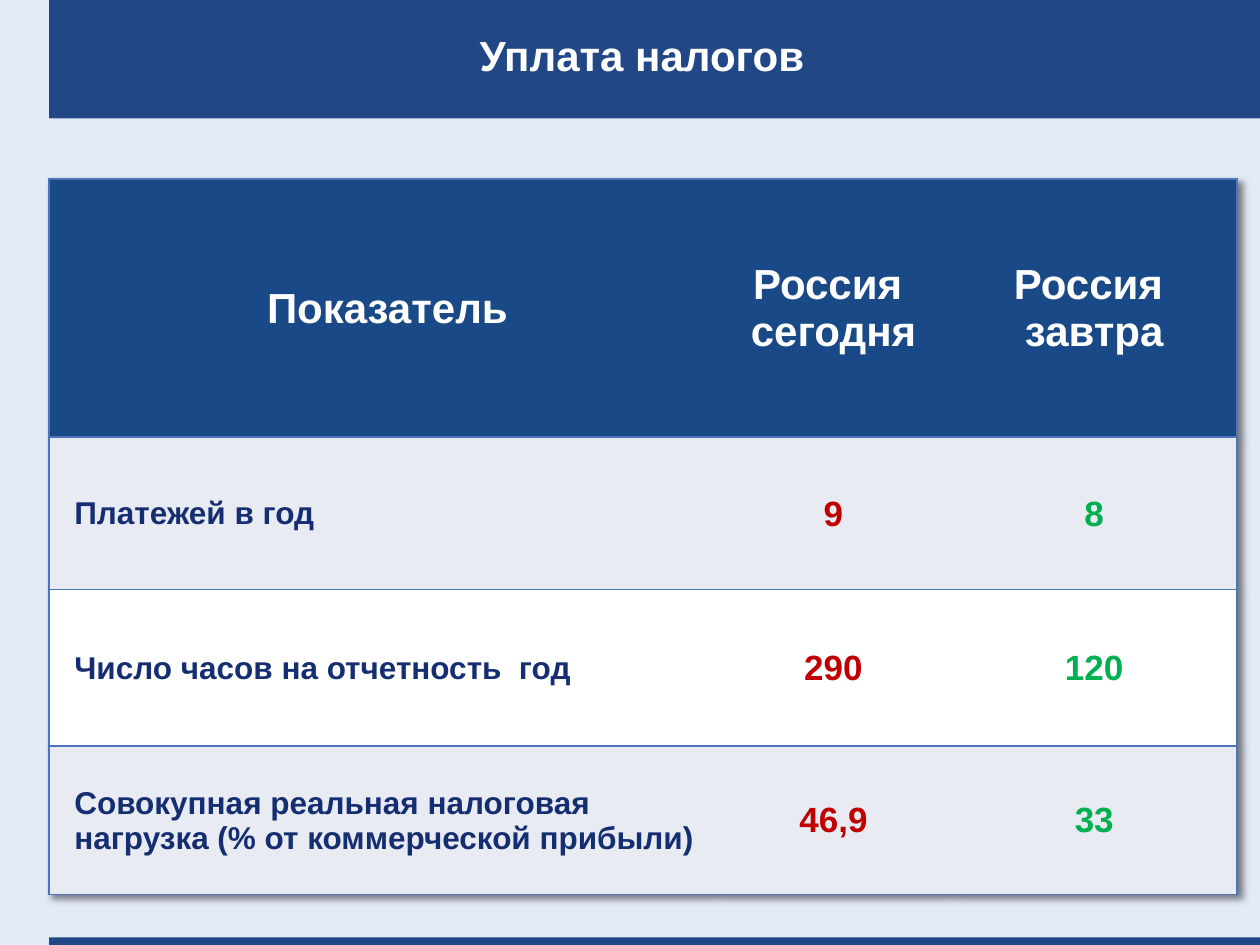
from lxml import etree
from pptx import Presentation
from pptx.dml.color import RGBColor
from pptx.enum.shapes import MSO_SHAPE
from pptx.enum.text import MSO_ANCHOR, PP_ALIGN
from pptx.oxml import parse_xml
from pptx.oxml.ns import nsdecls, qn
from pptx.util import Inches, Pt

RECT = MSO_SHAPE.RECTANGLE
MIDDLE = MSO_ANCHOR.MIDDLE
LEFT, CENTER = PP_ALIGN.LEFT, PP_ALIGN.CENTER

PALE = RGBColor(0xE3, 0xEB, 0xF8)
BLUE = RGBColor(0x21, 0x47, 0x86)
HEAD = RGBColor(0x19, 0x49, 0x86)
EDGE = RGBColor(0x4D, 0x74, 0xBB)
GRAY = RGBColor(0xE9, 0xEB, 0xF3)
WHITE = RGBColor(0xFF, 0xFF, 0xFF)
NAVY = RGBColor(0x14, 0x2E, 0x71)
RED = RGBColor(0xC0, 0x00, 0x00)
GREEN = RGBColor(0x00, 0xB0, 0x50)

MARGIN = 0.39
COLS = [5.29, 1.87, 2.27]
HEIGHTS = [2.05, 1.21, 1.24, 1.18]
ROWS = [
    ["Показатель", "Россия \nсегодня", "Россия \nзавтра"],
    ["Платежей в год", "9", "8"],
    ["Число часов на отчетность  год", "290", "120"],
    ["Совокупная реальная налоговая нагрузка (% от коммерческой прибыли)",
     "46,9", "33"],
]
STYLES = [
    dict(size=18, color=NAVY, align=LEFT, indent=0.19),
    dict(size=20, color=RED),
    dict(size=20, color=GREEN),
]


def write(frame, text, size=24, color=WHITE, align=CENTER, indent=0, spacing=None):
    frame.word_wrap = True
    frame.text = text
    for para in frame.paragraphs:
        para.alignment = align
        para.line_spacing = spacing
        if indent:
            props = para._p.get_or_add_pPr()
            props.set("marL", str(Inches(indent)))
            props.set("indent", "0")
        for run in para.runs:
            font = run.font
            font.name = "Arial"
            font.size = Pt(size)
            font.bold = True
            font.color.rgb = color


def shadow(blur, dist, angle, alpha):
    return parse_xml(
        f'<a:effectLst {nsdecls("a")}><a:outerShdw blurRad="{Pt(blur)}" '
        f'dist="{Pt(dist)}" dir="{angle * 60000}" algn="tl" rotWithShape="0">'
        f'<a:srgbClr val="000000"><a:alpha val="{alpha * 1000}"/></a:srgbClr>'
        '</a:outerShdw></a:effectLst>')


def add_bar(slide, top, height):
    bar = slide.shapes.add_shape(
        RECT, Inches(MARGIN), Inches(top), Inches(10 - MARGIN), Inches(height))
    bar.shadow.inherit = False
    bar.fill.solid()
    bar.fill.fore_color.rgb = BLUE
    bar.line.fill.background()


def add_title(slide, text):
    box = slide.shapes.add_textbox(
        Inches(MARGIN), 0, Inches(9.21), Inches(0.94))
    frame = box.text_frame
    frame.margin_left = Inches(0.2)
    frame.margin_right = frame.margin_top = frame.margin_bottom = 0
    frame.vertical_anchor = MIDDLE
    write(frame, text, spacing=0.8)
    props = frame.paragraphs[0].runs[0].font._element
    props.find(qn("a:solidFill")).addnext(shadow(0, 3, 45, 100))


def set_edges(cell, shown):
    props = cell._tc.get_or_add_tcPr()
    for place, side in enumerate("LRTB"):
        line = etree.Element(qn(f"a:ln{side}"), w=str(Pt(1)))
        if side in shown:
            fill = etree.SubElement(line, qn("a:solidFill"))
            etree.SubElement(fill, qn("a:srgbClr"), val=str(EDGE))
        else:
            etree.SubElement(line, qn("a:noFill"))
        props.insert(place, line)


def fill_cell(cell, text, row, col):
    cell.margin_left = cell.margin_right = cell.margin_top = Inches(0.01)
    cell.margin_bottom = 0
    cell.vertical_anchor = MIDDLE
    cell.fill.solid()
    if row == 0:
        cell.fill.fore_color.rgb = HEAD
        write(cell.text_frame, text, indent=0 if col else 0.08)
    else:
        cell.fill.fore_color.rgb = GRAY if row % 2 else WHITE
        write(cell.text_frame, text, **STYLES[col])
    set_edges(cell, "TB" + ("L", "", "R")[col])


def add_grid(slide):
    frame = slide.shapes.add_table(
        len(ROWS), len(COLS), Inches(MARGIN), Inches(1.42),
        Inches(sum(COLS)), Inches(sum(HEIGHTS)))
    table = frame.table
    table._tbl.tblPr.insert(0, shadow(4, 3, 45, 50))
    for col, width in enumerate(COLS):
        table.columns[col].width = Inches(width)
    for row, texts in enumerate(ROWS):
        table.rows[row].height = Inches(HEIGHTS[row])
        for col, text in enumerate(texts):
            fill_cell(table.cell(row, col), text, row, col)


def main():
    deck = Presentation()
    deck.slide_width, deck.slide_height = Inches(10), Inches(7.5)
    slide = deck.slides.add_slide(deck.slide_layouts[6])
    slide.background.fill.solid()
    slide.background.fill.fore_color.rgb = PALE
    add_bar(slide, 0, 0.94)
    add_bar(slide, 7.44, 0.08)
    add_grid(slide)
    add_title(slide, "Уплата налогов")
    deck.save("out.pptx")


if __name__ == "__main__":
    main()
